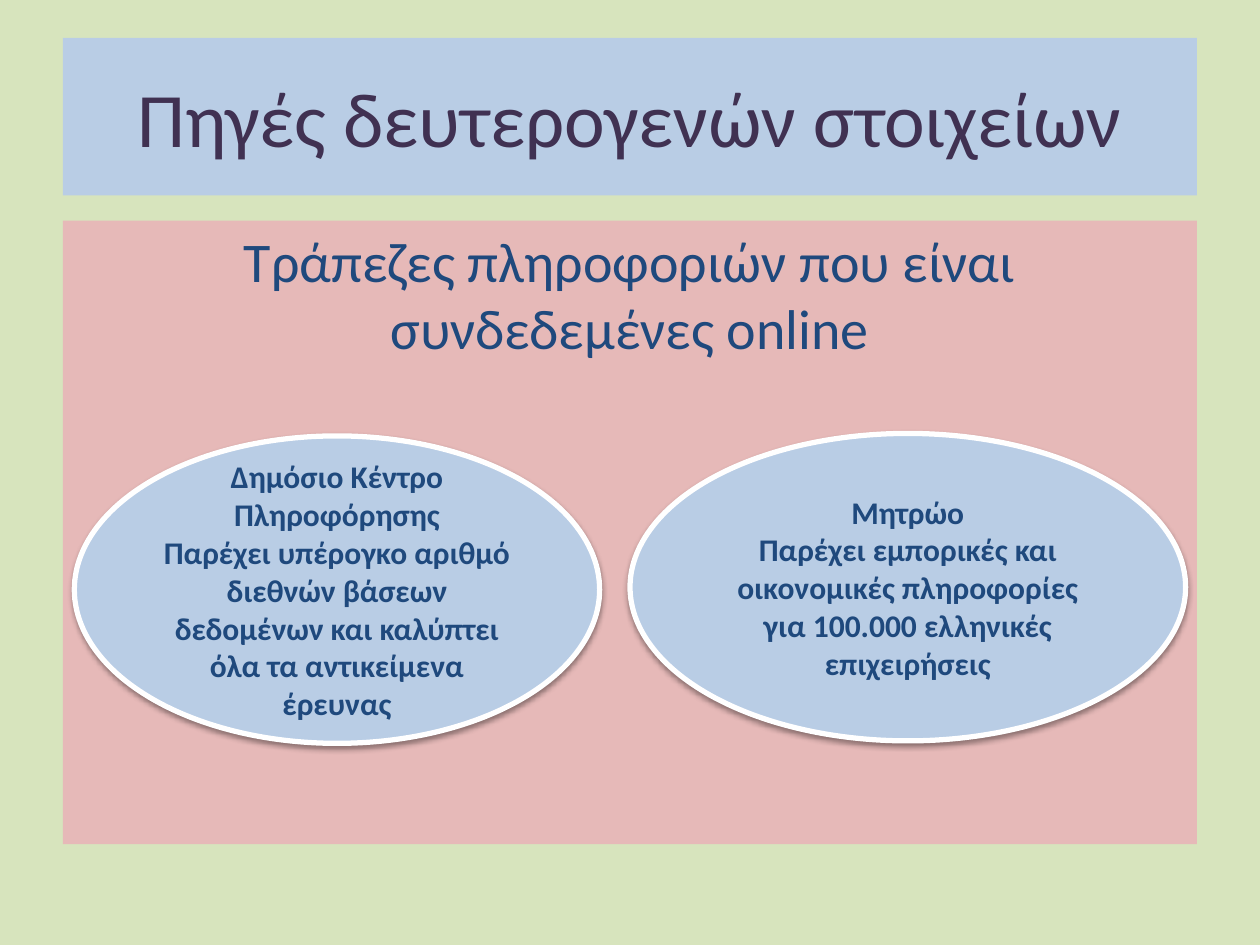
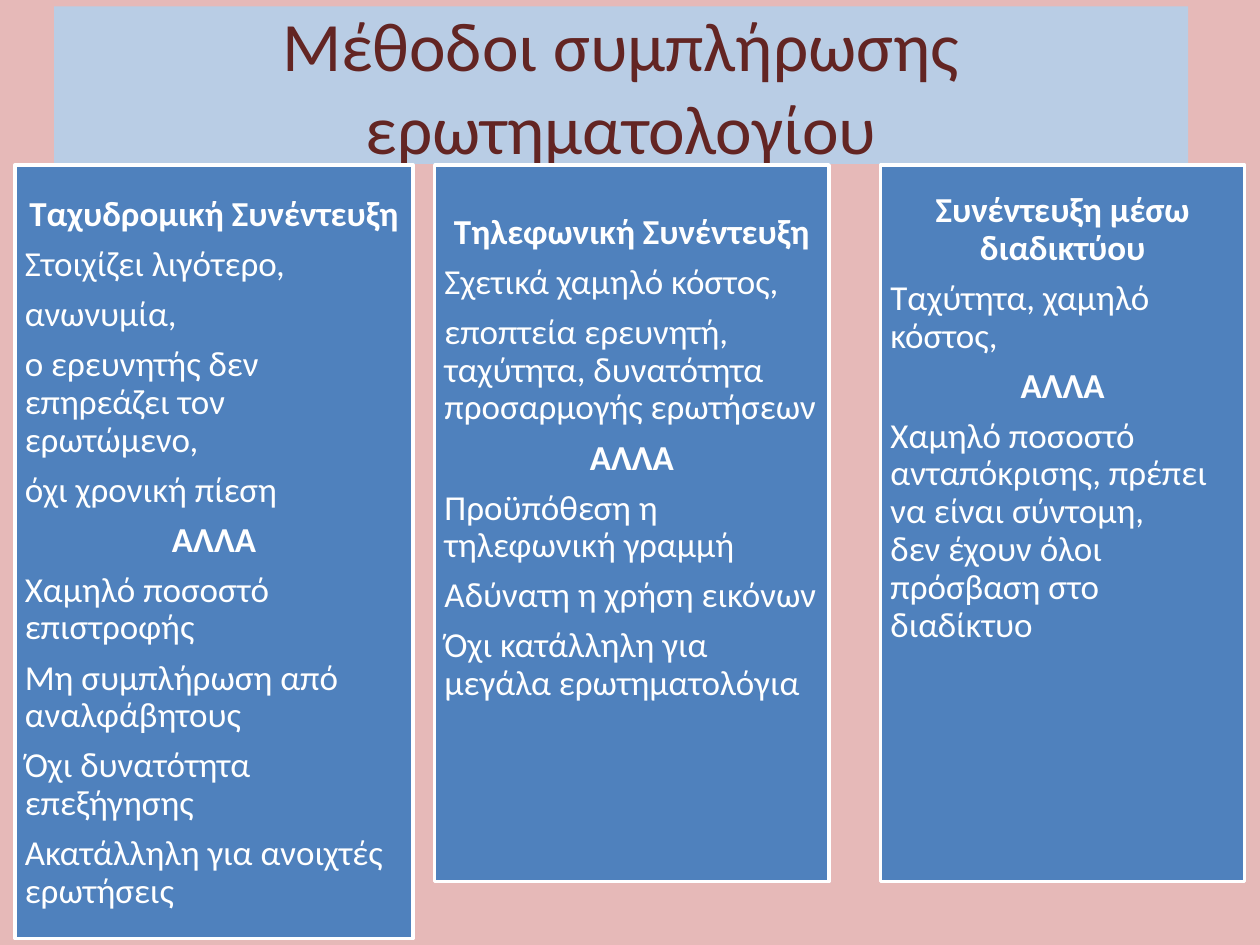
from dataclasses import dataclass

from lxml import etree
from pptx import Presentation
from pptx.dml.color import RGBColor
from pptx.enum.shapes import MSO_SHAPE
from pptx.enum.text import MSO_ANCHOR, PP_ALIGN
from pptx.oxml.ns import qn
from pptx.util import Pt

RECT, OVAL = MSO_SHAPE.RECTANGLE, MSO_SHAPE.OVAL
TOP, MIDDLE = MSO_ANCHOR.TOP, MSO_ANCHOR.MIDDLE
LEFT, CENTER = PP_ALIGN.LEFT, PP_ALIGN.CENTER


@dataclass(frozen=True)
class Theme:
    font: str = "Calibri"
    green: str = "D7E4BD"
    pink: str = "E6B9B8"
    pale_blue: str = "B9CDE5"
    blue: str = "4F81BD"
    navy: str = "1F497D"
    purple: str = "403152"
    maroon: str = "632523"
    white: str = "FFFFFF"
    title: float = 44
    long_title: float = 39.6
    lead: float = 32
    column: float = 20
    source: float = 18


T = Theme()
BUT = "ΑΛΛΑ"
TITLE_W, TITLE_H = 648, 90

SOURCES_TITLE = "Πηγές δευτερογενών στοιχείων"
SOURCES_LEAD = "Τράπεζες πληροφοριών που είναι συνδεδεμένες online"
# (left, top, width, height), paragraphs
SOURCES = [
    ((42.5, 249.1, 300.2, 175.7),
     ["Δημόσιο Κέντρο Πληροφόρησης",
      "Παρέχει υπέρογκο αριθμό διεθνών βάσεων δεδομένων και καλύπτει "
      "όλα τα αντικείμενα έρευνας"]),
    ((360, 247.7, 317.5, 175.7),
     ["Μητρώο",
      "Παρέχει εμπορικές και οικονομικές πληροφορίες για 100.000 "
      "ελληνικές επιχειρήσεις"]),
]

METHODS_TITLE = "Μέθοδοι συμπλήρωσης ερωτηματολογίου"
METHODS_TOP = 94.3
# left, width, height, space above the text, heading, advantages, drawbacks
METHODS = [
    (8.6, 227.5, 442, 17.7, "Ταχυδρομική Συνέντευξη",
     ["Στοιχίζει λιγότερο,", "ανωνυμία,",
      "ο ερευνητής δεν επηρεάζει τον ερωτώμενο,", "όχι χρονική πίεση"],
     ["Χαμηλό ποσοστό επιστροφής", "Μη συμπλήρωση από αναλφάβητους",
      "Όχι δυνατότητα επεξήγησης", "Ακατάλληλη για ανοιχτές ερωτήσεις"]),
    (248.4, 225.4, 409.5, 28, "Τηλεφωνική Συνέντευξη",
     ["Σχετικά χαμηλό κόστος,",
      "εποπτεία ερευνητή, ταχύτητα, δυνατότητα προσαρμογής ερωτήσεων"],
     ["Προϋπόθεση η τηλεφωνική γραμμή", "Αδύνατη η χρήση εικόνων",
      "Όχι κατάλληλη για μεγάλα ερωτηματολόγια"]),
    (503.2, 208.1, 409.5, 15.5, "Συνέντευξη μέσω διαδικτύου",
     ["Ταχύτητα, χαμηλό κόστος,"],
     ["Χαμηλό ποσοστό ανταπόκρισης, πρέπει να είναι σύντομη,\v"
      "δεν έχουν όλοι πρόσβαση στο διαδίκτυο"]),
]


def rgb(color):
    return RGBColor.from_string(color)


def add_slide(prs, background):
    s = prs.slides.add_slide(prs.slide_layouts[6])
    s.background.fill.solid()
    s.background.fill.fore_color.rgb = rgb(background)
    return s


def add_panel(s, kind, box, fill, border=None):
    """Add a filled shape; border is the width of its white outline."""
    sp = s.shapes.add_shape(kind, *map(Pt, box))
    sp.shadow.inherit = False
    sp.fill.solid()
    sp.fill.fore_color.rgb = rgb(fill)
    if border:
        sp.line.color.rgb = rgb(T.white)
        sp.line.width = Pt(border)
    else:
        sp.line.fill.background()
    return sp


def write(sp, items, size, color, anchor=MIDDLE, spacing=None, after=None):
    """Fill a shape with (text, alignment, bold) paragraphs."""
    tf = sp.text_frame
    tf.word_wrap = True
    tf.vertical_anchor = anchor
    for i, (text, align, bold) in enumerate(items):
        p = tf.add_paragraph() if i else tf.paragraphs[0]
        p.text = text
        p.alignment = align
        p.line_spacing = spacing
        if after:
            p.space_after = Pt(after)
        p.font.name = T.font
        p.font.size = Pt(size)
        p.font.bold = bold
        p.font.color.rgb = rgb(color)


def add_title(s, text, left, top, size, color):
    sp = add_panel(s, RECT, (left, top, TITLE_W, TITLE_H), T.pale_blue)
    write(sp, [(text, CENTER, False)], size, color)


def add_soft_shadow(sp):
    effects = sp._element.spPr.find(qn("a:effectLst"))
    shadow = etree.SubElement(
        effects, qn("a:outerShdw"), blurRad=str(Pt(3.1)), dist=str(Pt(1.6)),
        dir="5400000", rotWithShape="0")
    color = etree.SubElement(shadow, qn("a:srgbClr"), val="000000")
    etree.SubElement(color, qn("a:alpha"), val="38000")


def build_sources(prs):
    s = add_slide(prs, T.green)
    add_title(s, SOURCES_TITLE, 36, 21.6, T.title, T.purple)
    body = add_panel(s, RECT, (36, 126, TITLE_W, 356.4), T.pink)
    write(body, [(SOURCES_LEAD, CENTER, False)], T.lead, T.navy, TOP)
    for box, texts in SOURCES:
        oval = add_panel(s, OVAL, box, T.pale_blue, 3)
        add_soft_shadow(oval)
        write(oval, [(text, CENTER, True) for text in texts], T.source, T.navy)


def build_methods(prs):
    s = add_slide(prs, T.pink)
    add_title(s, METHODS_TITLE, 31, 3.6, T.long_title, T.maroon)
    for left, width, height, above, heading, pros, cons in METHODS:
        column = add_panel(s, RECT, (left, METHODS_TOP, width, height), T.blue, 2)
        tf = column.text_frame
        tf.margin_left = tf.margin_right = Pt(5.6)
        tf.margin_top = Pt(above)
        items = [(heading, CENTER, True)]
        items += [(text, LEFT, False) for text in pros]
        items += [(BUT, CENTER, True)]
        items += [(text, LEFT, False) for text in cons]
        write(column, items, T.column, T.white, TOP, spacing=0.9, after=7)


def main():
    prs = Presentation()
    prs.slide_width, prs.slide_height = Pt(720), Pt(540)
    build_sources(prs)
    build_methods(prs)
    prs.save("out.pptx")


if __name__ == "__main__":
    main()
